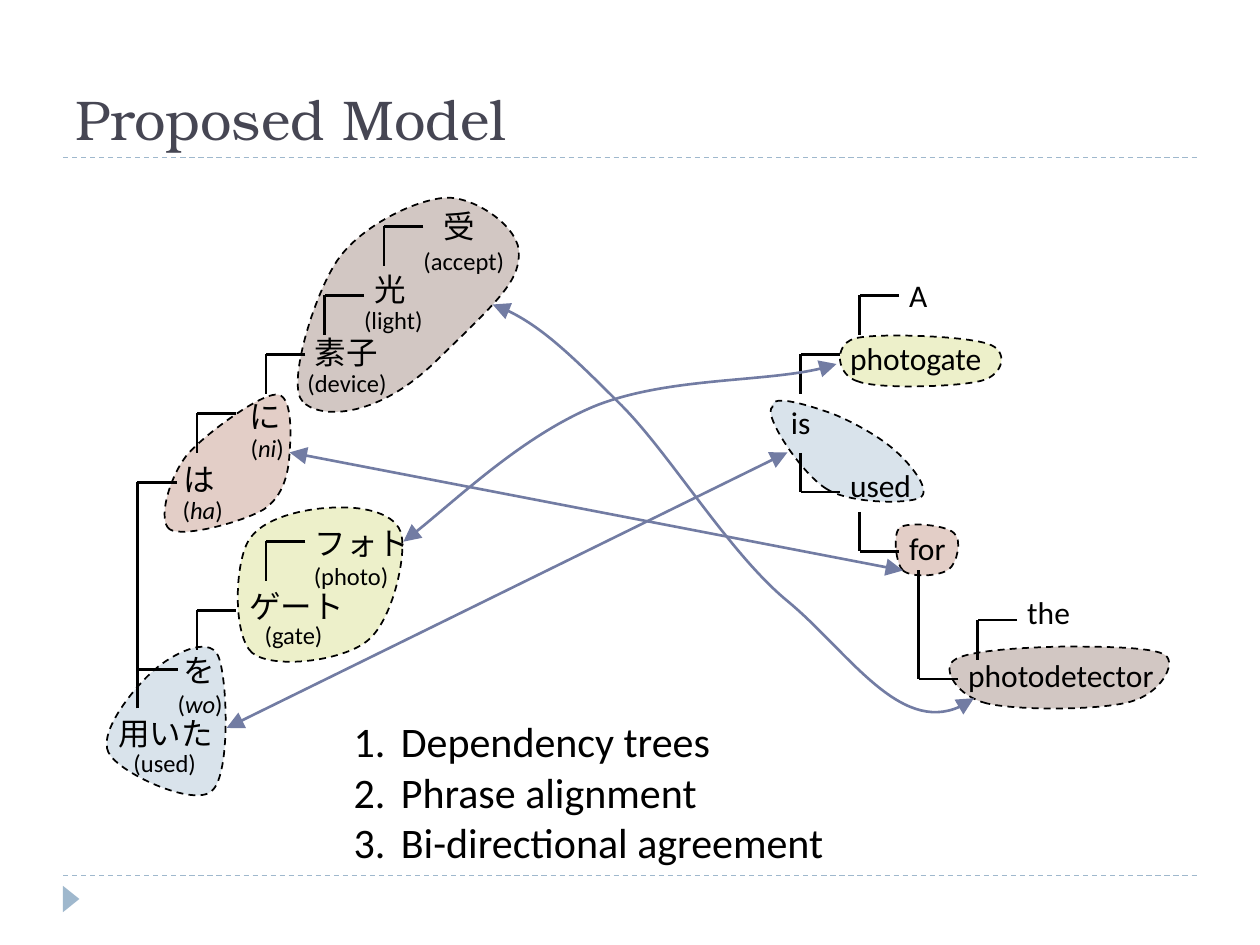
from lxml.etree import SubElement
from pptx import Presentation
from pptx.dml.color import RGBColor
from pptx.enum.dml import MSO_LINE
from pptx.enum.shapes import MSO_CONNECTOR, MSO_SHAPE
from pptx.enum.text import MSO_ANCHOR, MSO_AUTO_SIZE
from pptx.oxml.ns import qn
from pptx.util import Pt

COLORS = {
    "title": "464653", "text": "000000", "rule": "9FB8CD", "link": "727CA3",
    "blue": "D9E3EB", "green": "EDF0CA", "rose": "E3CEC7", "brown": "D2C7C3",
}
ARM = 22.5      # length of a tree branch
ROW = 36.25     # distance between words of a tree
INDENT = 33.75  # distance between levels of the English tree


class TreePage:
    def __init__(self, page):
        self.page = page
        self.font = "Calibri"

    def color(self, name):
        return RGBColor.from_string(COLORS[name])

    def stroke(self, line, color, width, dashed=False, arrows=False):
        line.color.rgb = self.color(color)
        line.width = Pt(width)
        if dashed:
            line.dash_style = MSO_LINE.DASH
        if arrows:
            for end in ("a:headEnd", "a:tailEnd"):
                SubElement(line._get_or_add_ln(), qn(end),
                           type="triangle", w="lg", len="lg")

    def line(self, x1, y1, x2, y2, color="text", width=1.5, **style):
        connector = self.page.shapes.add_connector(
            MSO_CONNECTOR.STRAIGHT, Pt(x1), Pt(y1), Pt(x2), Pt(y2))
        self.stroke(connector.line, color, width, **style)
        SubElement(connector._element.spPr, qn("a:effectLst"))

    def branch(self, x, y, stem=ARM):
        self.line(x, y + stem, x, y)
        self.line(x + ARM, y, x, y)

    def curve(self, points, close=False):
        """Draw cubic curves: a start, then two controls and an end for each."""
        start, *rest = [(Pt(x), Pt(y)) for x, y in points]
        builder = self.page.shapes.build_freeform(*start)
        builder.add_line_segments(rest, close=close)
        shape = builder.convert_to_shape()
        shape.shadow.inherit = False
        segments = list(shape._element.iter(qn("a:lnTo")))
        for first in range(0, len(segments), 3):
            cubic, *others = segments[first:first + 3]
            bezier = cubic.makeelement(qn("a:cubicBezTo"))
            cubic.addprevious(bezier)
            for segment in (cubic, *others):
                bezier.append(segment[0])
                segment.getparent().remove(segment)
        return shape

    def phrase(self, color, points):
        shape = self.curve(points + points[:1], close=True)
        shape.fill.solid()
        shape.fill.fore_color.rgb = self.color(color)
        self.stroke(shape.line, "text", 1, dashed=True)

    def curved_link(self, points):
        shape = self.curve(points)
        shape.fill.background()
        self.stroke(shape.line, "link", 1.5, arrows=True)

    def marker(self, x, y, width, height):
        shape = self.page.shapes.add_shape(
            MSO_SHAPE.ISOSCELES_TRIANGLE, Pt(x), Pt(y), Pt(width), Pt(height))
        shape.rotation = 90
        shape.shadow.inherit = False
        shape.fill.solid()
        shape.fill.fore_color.rgb = self.color("rule")
        shape.line.fill.background()

    def text(self, text, x, y, width, height, size=18, color="text",
             font=None, inset=(0, 0)):
        box = self.page.shapes.add_textbox(Pt(x), Pt(y), Pt(width), Pt(height))
        frame = box.text_frame
        frame.word_wrap = True
        frame.margin_left = frame.margin_right = Pt(inset[0])
        frame.margin_top = frame.margin_bottom = Pt(inset[1])
        frame.text = text
        for paragraph in frame.paragraphs:
            for span in paragraph.runs:
                self.format(span, size, color, font)
        return frame

    def format(self, span, size, color="text", font=None):
        span.font.size = Pt(size)
        span.font.name = font or self.font
        span.font.color.rgb = self.color(color)

    def gloss(self, word, x, y, width, italic=False):
        first, *others = ("(", word, ")") if italic else (f"({word})",)
        frame = self.text(first, x, y, width, 17, size=14)
        frame.word_wrap = False
        frame.auto_size = MSO_AUTO_SIZE.SHAPE_TO_FIT_TEXT
        for part in others:
            span = frame.paragraphs[0].add_run()
            span.text = part
            self.format(span, 14)
            span.font.italic = part == word

    def numbered(self, items, x, y, width, height):
        frame = self.text("\n".join(items), x, y, width, height,
                          size=24, inset=(7.2, 3.6))
        for paragraph in frame.paragraphs:
            properties = paragraph._p.get_or_add_pPr()
            properties.set("marL", str(Pt(27)))
            properties.set("indent", str(-Pt(27)))
            SubElement(properties, qn("a:buAutoNum"), type="arabicPeriod")


deck = Presentation()
deck.slide_width, deck.slide_height = Pt(720), Pt(540)
tree = TreePage(deck.slides.add_slide(deck.slide_layouts[6]))

# Frame and title
for y in (500.4, 90):
    tree.line(36, y, 684, y, "rule", 0.75, dashed=True)
tree.marker(33.1, 509, 15.1, 9.4)
title = tree.text("Proposed Model", 36, 12.2, 648, 77.8, 32, "title",
                  "TeX Gyre Bonum", (7.2, 3.6))
title.vertical_anchor = MSO_ANCHOR.BOTTOM

# Aligned phrases, one colour for each pair
PHRASES = [
    ("blue", [(62, 430), (56, 418), (77, 392.5), (88, 383), (98, 374),
              (119, 363), (124.5, 374.5), (130, 386), (132, 443), (121, 452),
              (111, 461.5), (67.5, 441.5)]),
    ("blue", [(472.5, 279.5), (458, 271), (435, 236), (441.5, 232.5),
              (440, 224.5), (463, 232), (474.5, 236), (486.5, 240.5),
              (503.5, 250), (512, 258), (520.5, 265.5), (533, 281),
              (525.5, 284.5), (519, 288), (486, 288)]),
    ("green", [(144, 373), (133, 363), (134, 322.5), (142, 309), (150.5, 294.5),
               (178.5, 290), (193, 290), (207.5, 289.5), (227, 293),
               (229.5, 306), (232, 319), (224, 355.5), (209.5, 366.5),
               (195, 378), (155.5, 382.5)]),
    ("green", [(490.5, 218), (478, 214.5), (476, 197.5), (488, 193.5),
               (500.5, 190), (552, 192), (564.5, 196.5), (576.5, 200),
               (574, 214), (561, 217.5), (548.5, 221), (502.5, 222.5)]),
    ("rose", [(97, 302.5), (90, 297.5), (96.5, 273.5), (106.5, 260.5),
              (116.5, 248.5), (147.5, 226), (157.5, 225.5), (167, 224.5),
              (166.5, 247), (165.5, 258.5), (165, 269.5), (162.5, 283),
              (151, 291), (139.5, 298), (105, 307.5)]),
    ("rose", [(516, 326), (512, 322.5), (510, 305.5), (514, 301.5), (519, 298),
              (540.5, 300), (545, 304.5), (550, 308), (547, 322), (542, 325.5),
              (537, 329), (521.5, 330.5)]),
    ("brown", [(173, 229.5), (163.5, 220.5), (179.5, 168), (193, 148.5),
               (206.5, 129), (237.5, 114), (255, 113), (272, 112.5),
               (298, 130.5), (296.5, 146), (296, 161.5), (284.5, 172),
               (249, 206.5), (214, 240.5), (181.5, 239)]),
    ("brown", [(564, 402), (547, 398), (538, 382.5), (545, 377.5),
               (552, 371.5), (587, 370), (607, 369.5), (627, 369.5),
               (659.5, 369.5), (666, 374.5), (672.5, 379.5), (663, 396.5),
               (646, 401), (628.5, 406), (581, 406)]),
]
for color, points in PHRASES:
    tree.phrase(color, points)

# Japanese tree
JAPANESE = [("受", 253.5), ("光", 214), ("素子", 180), ("に", 142.5), ("は", 105),
            ("フォト", 180), ("ゲート", 142.5), ("を", 105), ("用いた", 67.5)]
for row, (word, x) in enumerate(JAPANESE):
    tree.text(word, x, 118 + row * ROW, 56.25, 21.8)
tree.branch(78.5, 275.6, 129.2)
tree.line(101.5, 382.5, 79, 382.5)
for x, y in [(112.5, 348.75), (152, 309.4), (112.5, 236.25), (152, 202.5),
             (185.6, 168.75), (219.4, 129.4)]:
    tree.branch(x, y)

# English tree
ENGLISH = [("A", 2, 56.25), ("photogate", 1, 124), ("is", 0, 56.25),
           ("used", 1, 56.25), ("for", 2, 56.25), ("the", 4, 56.25),
           ("photodetector", 3, 139)]
for row, (word, level, width) in enumerate(ENGLISH):
    tree.text(word, 452 + level * INDENT, 157.5 + row * ROW, width, 21.8)
for level, y, stem in [(0, 281.25, -ARM), (0, 202.5, ARM), (1, 168.75, ARM),
                       (1, 315, -ARM), (2, 388, -62), (3, 354.4, ARM)]:
    tree.branch(457.5 + level * INDENT, y, stem)

# Glosses of the Japanese words
for word, x, y, width in [("accept", 242, 140.4, 47), ("light", 208, 174.2, 34),
                          ("device", 175.7, 210.2, 46), ("photo", 179.3, 320.4, 43.5),
                          ("gate", 151.2, 354.2, 34), ("used", 76.3, 427.7, 36)]:
    tree.gloss(word, x, y, width)
for word, x, y, width in [("ni", 143.3, 247.7, 19.5), ("ha", 104.4, 283, 23),
                          ("wo", 101.5, 393.8, 26)]:
    tree.gloss(word, x, y, width, italic=True)

# Alignment links
tree.curved_link([(281.5, 174), (304, 181.5), (326, 202.5), (354, 230.5),
                  (382.5, 258.5), (416, 315.5), (450, 343.5),
                  (484, 371.5), (518.5, 427.5), (556.5, 399)])
tree.line(165.5, 258.5, 516, 326, "link", arrows=True)
tree.line(129.5, 416, 450, 258.5, "link", arrows=True)
tree.curved_link([(230.5, 309.5), (255, 291), (299, 249), (340, 232),
                  (381.5, 215.5), (446.5, 219), (478, 208)])

# Key points
tree.numbered(["Dependency trees", "Phrase alignment", "Bi-directional agreement"],
              195, 405.4, 333.4, 94.5)

deck.save("out.pptx")
